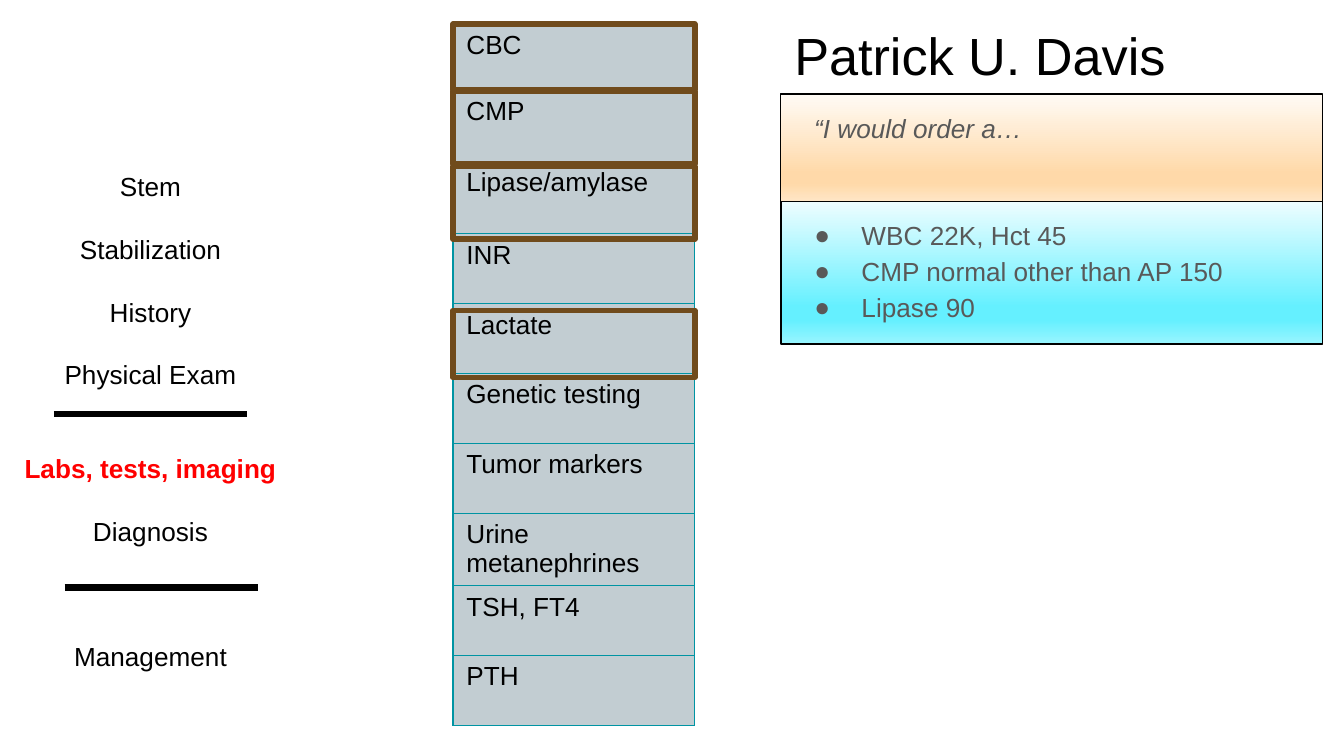
from dataclasses import dataclass
from typing import Optional

from lxml import etree
from pptx import Presentation
from pptx import util as u
from pptx.dml.color import RGBColor
from pptx.enum import shapes, text
from pptx.oxml.ns import qn


@dataclass(frozen=True)
class Theme:
    font: str = "Arial"
    title_size: float = 28
    text_size: float = 14
    step_pitch: float = 16.78
    panel_spacing: float = 1.15
    ink: str = "000000"
    muted: str = "595959"
    current: str = "FF0000"
    cell: str = "C2CDD2"
    cell_border: str = "0094A3"
    ordered: str = "704B1C"
    peach: tuple = ("FFFBF5", "FFD9A9", "FFD9A9", "FFE6C6")
    aqua: tuple = ("EEFDFF", "65F0FF", "65F0FF", "98F5FF")
    stops: tuple = (0, 74, 83, 100)


@dataclass(frozen=True)
class Box:
    """Place on a grid of 100 columns; grid cells are square."""
    col: float
    row: float
    cols: float
    rows: float


@dataclass(frozen=True)
class Step:
    name: str
    gap: int = 1  # empty lines above
    current: bool = False


@dataclass(frozen=True)
class Test:
    name: str
    rows: float = 5.2
    frame: Optional[tuple] = None  # top and height of the frame when ordered


THEME = Theme()
WIDTH = u.Inches(10)
HEIGHT = u.Emu(WIDTH * 9 // 16)
COLUMN = WIDTH / 100
TESTS_COL, TESTS_ROW, TESTS_COLS = 33.7, 1.8, 18
ANSWER_COL, ANSWER_COLS = 58.1, 40.3

STEPS = [
    Step("Stem", 0), Step("Stabilization"), Step("History"), Step("Physical Exam"),
    Step("Labs, tests, imaging", 2, True), Step("Diagnosis"), Step("Management", 3),
]
DIVIDERS = [(4, 30.8), (4.8, 43.7)]
DIVIDER_COLS = 14.4
TESTS = [
    Test("CBC", 4.9, (1.8, 4.9)), Test("CMP", 5.3, (6.8, 5.4)),
    Test("Lipase/amylase", 5.4, (12.4, 5.4)), Test("INR"),
    Test("Lactate", frame=(23.1, 5)), Test("Genetic testing"), Test("Tumor markers"),
    Test("Urine metanephrines", 5.4), Test("TSH, FT4"), Test("PTH"),
]
RESULTS = ["WBC 22K, Hct 45", "CMP normal other than AP 150", "Lipase 90"]


def grid(count: float) -> u.Emu:
    return u.Emu(round(count * COLUMN))


def edges(box: Box) -> tuple:
    return tuple(grid(n) for n in (box.col, box.row, box.cols, box.rows))


def rgb(color: str) -> RGBColor:
    return RGBColor.from_string(color)


def apply(target, **values) -> None:
    for name, value in values.items():
        setattr(target, name, value)


def place(shape, box: Box) -> None:
    apply(shape, **dict(zip(("left", "top", "width", "height"), edges(box))))


def prepare_frame(frame, side: float = 1, top: float = 1) -> None:
    apply(frame, word_wrap=True, auto_size=text.MSO_AUTO_SIZE.NONE,
          vertical_anchor=text.MSO_ANCHOR.TOP, margin_left=grid(side),
          margin_right=grid(side), margin_top=grid(top), margin_bottom=grid(top))


def write(paragraph, words: str, color: str = THEME.ink, size: float = THEME.text_size,
          bold: bool = False, italic: bool = False) -> None:
    run = paragraph.add_run()
    run.text = words
    apply(run.font, name=THEME.font, size=u.Pt(size), bold=bold, italic=italic)
    run.font.color.rgb = rgb(color)


def lay_out(paragraph, align=text.PP_ALIGN.LEFT, spacing=1.0, before: float = 0,
            left: float = 0, hanging: float = 0, bullet: str = "") -> None:
    apply(paragraph, alignment=align, line_spacing=spacing, space_before=u.Pt(before))
    props = paragraph._p.get_or_add_pPr()
    props.set("marL", str(grid(left)))
    props.set("indent", str(-grid(hanging)))
    if bullet:
        color = etree.SubElement(props, qn("a:buClr"))
        etree.SubElement(color, qn("a:srgbClr"), val=THEME.muted)
        etree.SubElement(props, qn("a:buChar"), char=bullet)
    else:
        etree.SubElement(props, qn("a:buNone"))


def fill_gradient(shape, colors: tuple) -> None:
    shape.fill.gradient()
    shape.fill.gradient_angle = 270
    stops = shape._element.spPr.find(qn("a:gradFill")).find(qn("a:gsLst"))
    for stop in list(stops):
        stops.remove(stop)
    for share, color in zip(THEME.stops, colors):
        stop = etree.SubElement(stops, qn("a:gs"), pos=str(share * 1000))
        etree.SubElement(stop, qn("a:srgbClr"), val=color)


def outline(shape, color: str, width: float) -> None:
    shape.line.color.rgb = rgb(color)
    shape.line.width = u.Pt(width)


def add_rectangle(slide, box: Box):
    shape = slide.shapes.add_shape(shapes.MSO_SHAPE.RECTANGLE, *edges(box))
    shape.shadow.inherit = False
    return shape


def add_divider(slide, col: float, row: float) -> None:
    y = grid(row)
    line = slide.shapes.add_connector(shapes.MSO_CONNECTOR.STRAIGHT,
                                      grid(col), y, grid(col + DIVIDER_COLS), y)
    outline(line, THEME.ink, 3.5)
    etree.SubElement(line._element.spPr, qn("a:effectLst"))


def border_cell(cell) -> None:
    props = cell._tc.get_or_add_tcPr()
    for index, side in enumerate(("lnL", "lnR", "lnT", "lnB")):
        line = etree.Element(qn(f"a:{side}"), w=str(u.Pt(0.75)))
        solid = etree.SubElement(line, qn("a:solidFill"))
        etree.SubElement(solid, qn("a:srgbClr"), val=THEME.cell_border)
        props.insert(index, line)


def add_tests(slide) -> None:
    box = Box(TESTS_COL, TESTS_ROW, TESTS_COLS, sum(test.rows for test in TESTS))
    table = slide.shapes.add_table(len(TESTS), 1, *edges(box)).table
    apply(table, first_row=False, horz_banding=False)
    for row, test in zip(table.rows, TESTS):
        row.height = grid(test.rows)
        cell = row.cells[0]
        cell.fill.solid()
        cell.fill.fore_color.rgb = rgb(THEME.cell)
        border_cell(cell)
        write(cell.text_frame.paragraphs[0], test.name)


def paragraphs(frame, items: list):
    for index, item in enumerate(items):
        yield (frame.add_paragraph() if index else frame.paragraphs[0]), item


def main() -> None:
    deck = Presentation()
    apply(deck, slide_width=WIDTH, slide_height=HEIGHT)
    slide = deck.slides.add_slide(deck.slide_layouts[3])
    patient, steps, results = slide.placeholders

    # Patient name
    place(patient, Box(ANSWER_COL, 0.7, 41.9, 6.3))
    prepare_frame(patient.text_frame)
    lay_out(patient.text_frame.paragraphs[0])
    write(patient.text_frame.paragraphs[0], "Patrick U. Davis", size=THEME.title_size)

    # Stages of the case
    place(steps, Box(0.8, 12.2, 20.8, 38.7))
    prepare_frame(steps.text_frame, side=0, top=0.5)
    for paragraph, step in paragraphs(steps.text_frame, STEPS):
        lay_out(paragraph, text.PP_ALIGN.CENTER, u.Pt(THEME.step_pitch),
                step.gap * THEME.step_pitch)
        write(paragraph, step.name, THEME.current if step.current else THEME.ink,
              bold=step.current)
    for col, row in DIVIDERS:
        add_divider(slide, col, row)

    # Candidate's answer
    answer = add_rectangle(slide, Box(ANSWER_COL, 7, ANSWER_COLS, 8))
    fill_gradient(answer, THEME.peach)
    prepare_frame(answer.text_frame)
    lay_out(answer.text_frame.paragraphs[0], spacing=THEME.panel_spacing, left=1.5)
    write(answer.text_frame.paragraphs[0], "“I would order a…", THEME.muted, italic=True)

    # Results
    place(results, Box(ANSWER_COL, 15, ANSWER_COLS, 10.6))
    fill_gradient(results, THEME.aqua)
    prepare_frame(results.text_frame)
    for paragraph, result in paragraphs(results.text_frame, RESULTS):
        lay_out(paragraph, spacing=THEME.panel_spacing, left=5, hanging=3.5, bullet="●")
        write(paragraph, result, THEME.muted)
    for panel in (answer, results):
        outline(panel, THEME.ink, 0.75)

    # Available tests, with frames on those ordered
    add_tests(slide)
    for test in TESTS:
        if test.frame:
            top, rows = test.frame
            frame = add_rectangle(slide, Box(TESTS_COL, top, TESTS_COLS, rows))
            frame.fill.background()
            outline(frame, THEME.ordered, 3)

    deck.save("out.pptx")


if __name__ == "__main__":
    main()
